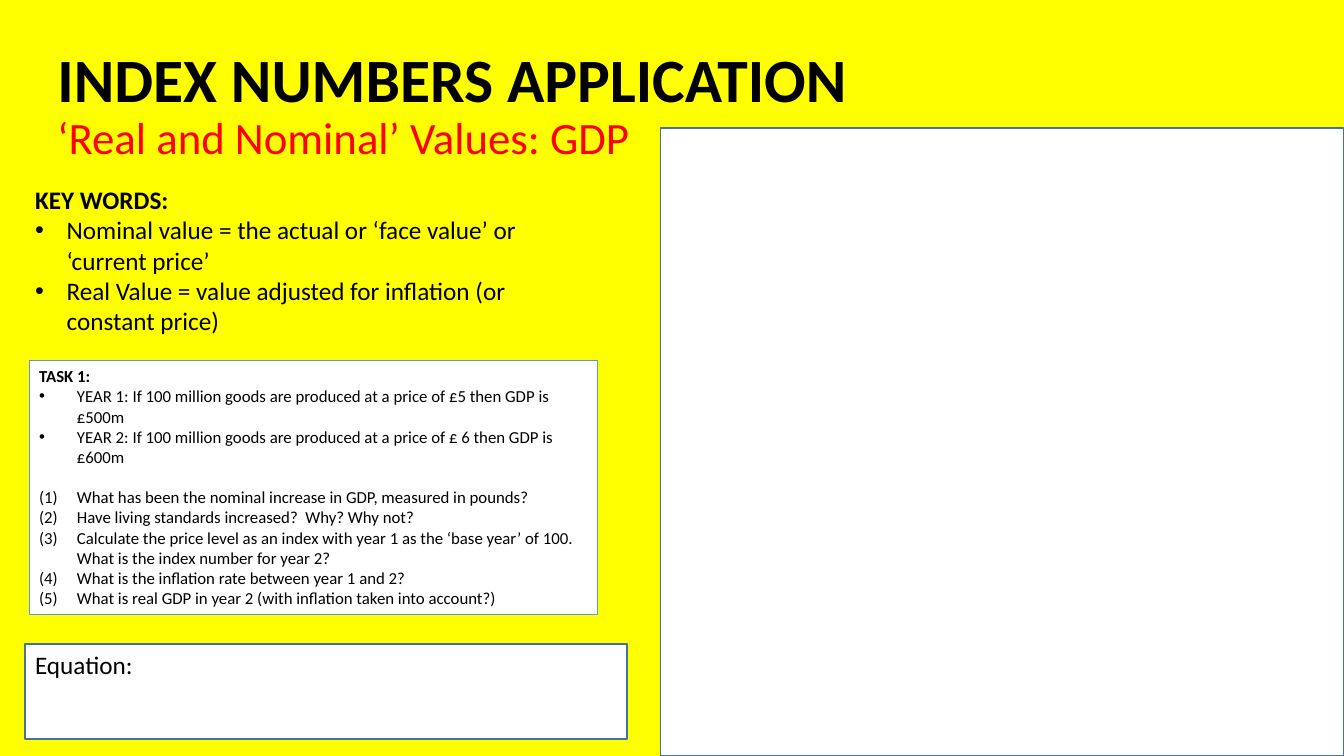
"""Build the slide on index numbers and real versus nominal GDP."""
from lxml.etree import SubElement
from pptx import Presentation
from pptx.dml.color import RGBColor
from pptx.enum.shapes import MSO_SHAPE
from pptx.enum.text import MSO_ANCHOR, PP_ALIGN
from pptx.oxml.ns import qn
from pptx.util import Pt

FONT = "Calibri"
BLACK, RED, WHITE, YELLOW = "000000", "FF0000", "FFFFFF", "FFFF00"
DARK_BLUE, LIGHT_BLUE = "43739E", "5B9BD5"

TITLE = [("INDEX NUMBERS APPLICATION", 44, BLACK, True),
         ("‘Real and Nominal’ Values: GDP", 32, RED, False)]
KEY_WORDS = [
    "Nominal value = the actual or ‘face value’ or ‘current price’",
    "Real Value = value adjusted for inflation (or constant price)",
]
TASK_FACTS = [
    "YEAR 1: If 100 million goods are produced at a price of £5 then GDP is £500m",
    "YEAR 2: If 100 million goods are produced at a price of £ 6 then GDP is £600m",
]
TASK_QUESTIONS = [
    "What has been the nominal increase in GDP, measured in pounds?",
    "Have living standards increased?  Why? Why not?",
    "Calculate the price level as an index with year 1 as the ‘base year’ of 100.  "
    "What is the index number for year 2?",
    "What is the inflation rate between year 1 and 2?",
    "What is real GDP in year 2 (with inflation taken into account?)",
]

TITLE_AREA = (34, 24, 828, 104)
ANSWER_AREA = (471.6, 91.4, 488.2, 448.6)
KEY_WORDS_AREA = (18, 128.2, 406, 116.6)
TASK_AREA = (20.9, 257.8, 406, 181.4)
EQUATION_AREA = (18, 460.1, 429.8, 67.7)


def colour(value):
    return RGBColor.from_string(value)


def add_text_area(page, area):
    frame = page.shapes.add_textbox(*map(Pt, area)).text_frame
    frame.word_wrap = True
    return frame


def add_panel(page, area, line, width):
    box = page.shapes.add_shape(MSO_SHAPE.RECTANGLE, *map(Pt, area))
    box.shadow.inherit = False
    box.fill.solid()
    box.fill.fore_color.rgb = colour(WHITE)
    box.line.color.rgb = colour(line)
    box.line.width = Pt(width)
    frame = box.text_frame
    frame.word_wrap = True
    frame.vertical_anchor = MSO_ANCHOR.TOP
    return frame


def add_span(para, text, size, hue=BLACK, bold=False):
    span = para.add_run()
    span.text = text
    span.font.name = FONT
    span.font.size = Pt(size)
    span.font.bold = bold
    span.font.color.rgb = colour(hue)


def start_text(frame, text, size, bold=False):
    para = frame.paragraphs[0]
    para.alignment = PP_ALIGN.LEFT
    add_span(para, text, size, bold=bold)


def add_list(frame, items, size, indent, numbered=False, gap=0):
    for index, item in enumerate(items):
        para = frame.add_paragraph()
        para.alignment = PP_ALIGN.LEFT
        para.space_before = Pt(0 if index else gap)
        add_span(para, item, size)
        props = para._p.get_or_add_pPr()
        props.set("marL", str(Pt(indent)))
        props.set("indent", str(-Pt(indent)))
        if numbered:
            SubElement(props, qn("a:buAutoNum"), type="arabicParenBoth")
        else:
            SubElement(props, qn("a:buFont"), typeface="Arial")
            SubElement(props, qn("a:buChar"), char="•")


def main():
    deck = Presentation()
    deck.slide_width, deck.slide_height = Pt(960), Pt(540)
    page = deck.slides.add_slide(deck.slide_layouts[6])
    page.background.fill.solid()
    page.background.fill.fore_color.rgb = colour(YELLOW)

    title = add_text_area(page, TITLE_AREA)
    title.vertical_anchor = MSO_ANCHOR.MIDDLE
    heading = title.paragraphs[0]
    heading.line_spacing = 0.9
    for index, line in enumerate(TITLE):
        if index:
            heading.add_line_break()
        add_span(heading, *line)

    add_panel(page, ANSWER_AREA, DARK_BLUE, 1)

    key_words = add_text_area(page, KEY_WORDS_AREA)
    start_text(key_words, "KEY WORDS:", 18, bold=True)
    add_list(key_words, KEY_WORDS, 18, 22.5)

    task = add_panel(page, TASK_AREA, LIGHT_BLUE, 0.75)
    start_text(task, "TASK 1:", 12, bold=True)
    add_list(task, TASK_FACTS, 12, 27)
    add_list(task, TASK_QUESTIONS, 12, 27, numbered=True, gap=14.5)

    equation = add_panel(page, EQUATION_AREA, DARK_BLUE, 1)
    start_text(equation, "Equation:", 18)

    deck.save("out.pptx")


if __name__ == "__main__":
    main()
